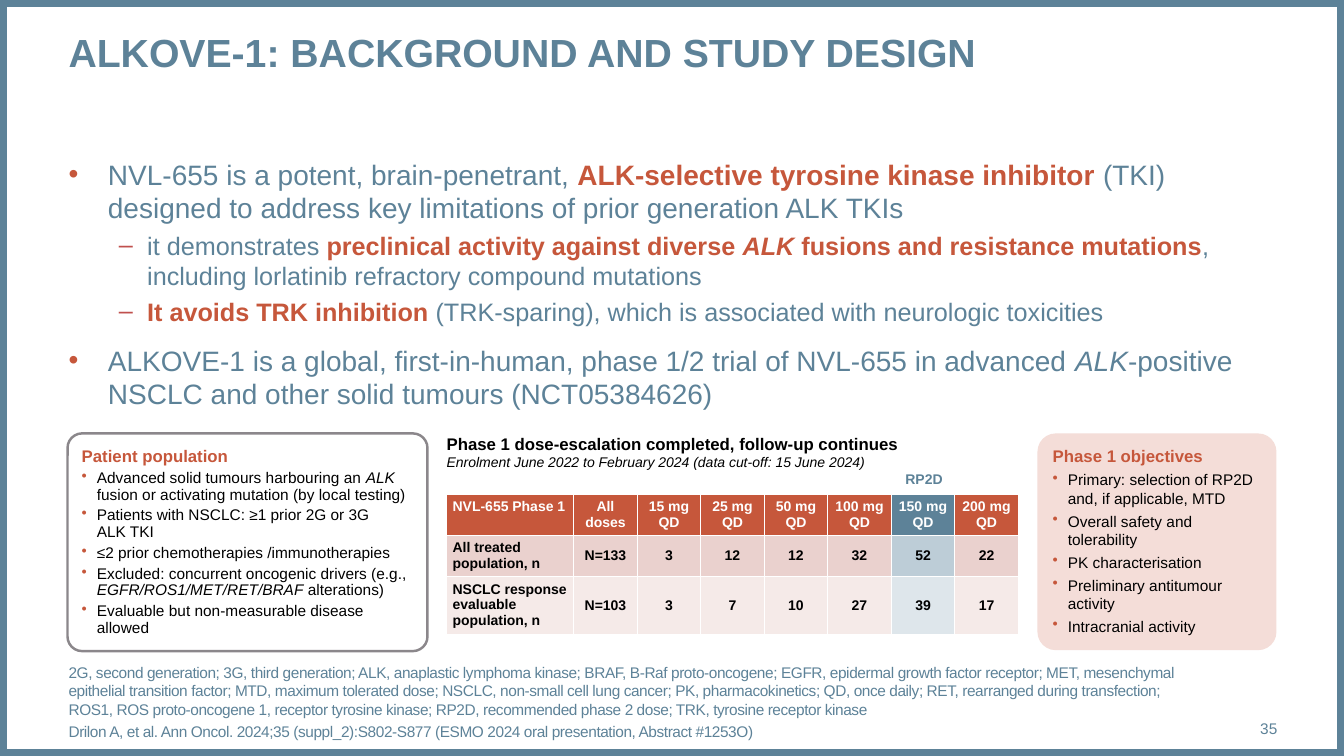
from lxml import etree
from pptx import Presentation
from pptx.dml.color import RGBColor
from pptx.enum import shapes, text
from pptx.oxml import ns
from pptx.util import Pt

PX = 9144  # 100 px to the inch
BLUE = RGBColor(0x5D, 0x82, 0x98)
RUST = RGBColor(0xC6, 0x57, 0x3B)
RED = RGBColor(0xC0, 0x50, 0x4D)
PINK = RGBColor(0xF4, 0xDD, 0xD8)
GREY = RGBColor(0x8B, 0x87, 0x8B)
BLACK = RGBColor(0, 0, 0)
WHITE = RGBColor(255, 255, 255)
ROSE = RGBColor(0xEA, 0xD1, 0xCE)
PALE = RGBColor(0xF5, 0xEA, 0xE8)
SKY = RGBColor(0xBD, 0xCD, 0xD7)
MIST = RGBColor(0xDE, 0xE6, 0xEB)
LEFT, MID = text.PP_ALIGN.LEFT, text.PP_ALIGN.CENTER
TOP, CENTRE = text.MSO_ANCHOR.TOP, text.MSO_ANCHOR.MIDDLE


def write(para, line, size, color, bold=False, align=LEFT):
    """Fill a paragraph; *...* is bold rust text and ~...~ is italic."""
    para.alignment = align
    for i, part in enumerate(line.split("*")):
        for j, bit in enumerate(part.split("~")):
            for k, piece in enumerate(bit.split("\n")):
                if k:
                    para.add_line_break()
                if not piece:
                    continue
                run = para.add_run()
                run.text = piece
                font = run.font
                font.name, font.size = "Arial", Pt(size)
                font.bold = bold or i % 2 == 1
                font.italic = j % 2 == 1
                font.color.rgb = RUST if i % 2 else color


def bullet(para, mark, color, left, hang):
    """Give a paragraph a hanging mark, or none when mark is empty."""
    props = para._p.get_or_add_pPr()
    props.set("marL", str(left * PX))
    props.set("indent", str(-hang * PX))
    if not mark:
        etree.SubElement(props, ns.qn("a:buNone"))
        return
    tint = etree.SubElement(props, ns.qn("a:buClr"))
    etree.SubElement(tint, ns.qn("a:srgbClr")).set("val", str(color))
    etree.SubElement(props, ns.qn("a:buChar")).set("char", mark)


deck = Presentation()
deck.slide_width, deck.slide_height = 1333 * PX, 750 * PX
slide = deck.slides.add_slide(deck.slide_layouts[3])

# Frame round the slide
edge = slide.shapes.add_shape(shapes.MSO_SHAPE.RECTANGLE, 0, 0, 1333 * PX, 750 * PX)
edge.shadow.inherit = False
edge.fill.background()
edge.line.color.rgb = BLUE
edge.line.width = Pt(10)

# Title, main list and footnotes, then the free text boxes
title, body, notes = slide.placeholders
number, head, dose = [slide.shapes.add_textbox(0, 0, 0, 0) for _ in range(3)]
for box, x, y, w, h, anchor, wrap in [
    (title, 68, 28, 1199, 94, TOP, True),
    (body, 68, 156, 1199, 495, TOP, True),
    (notes, 68, 695, 1126, 40, text.MSO_ANCHOR.BOTTOM, True),
    (number, 1181, 703, 86, 40, CENTRE, True),
    (head, 443, 430, 453, 37, TOP, False),
    (dose, 898, 467, 37, 17, TOP, False),
]:
    box.left, box.top, box.width, box.height = x * PX, y * PX, w * PX, h * PX
    frame = box.text_frame
    frame.margin_left = frame.margin_right = frame.margin_top = frame.margin_bottom = 0
    frame.vertical_anchor = anchor
    frame.word_wrap = wrap
    frame.auto_size = text.MSO_AUTO_SIZE.NONE

write(title.text_frame.paragraphs[0], "ALKOVE-1: BACKGROUND AND STUDY DESIGN", 28, BLUE, True)
write(number.text_frame.paragraphs[0], "35", 11, BLUE, align=text.PP_ALIGN.RIGHT)
write(dose.text_frame.paragraphs[0], "RP2D", 10, BLUE, True, MID)
write(head.text_frame.paragraphs[0], "Phase 1 dose-escalation completed, follow-up continues", 12, BLACK, True)
write(head.text_frame.add_paragraph(),
      "~Enrolment June 2022 to February 2024 (data cut-off: 15 June 2024)~", 10, BLACK)

points = [
    (0, "NVL-655 is a potent, brain-penetrant, *ALK-selective tyrosine kinase inhibitor *(TKI) "
        "designed to address key limitations of prior generation ALK TKIs"),
    (1, "it demonstrates *preclinical activity against diverse ~ALK~ fusions and resistance "
        "mutations*, including lorlatinib refractory compound mutations"),
    (1, "*It avoids TRK inhibition* (TRK-sparing), which is associated with neurologic toxicities"),
    (0, "ALKOVE-1 is a global, first-in-human, phase 1/2 trial of NVL-655 in advanced "
        "~ALK~-positive NSCLC and other solid tumours (NCT05384626)"),
]
for i, (level, line) in enumerate(points):
    para = body.text_frame.add_paragraph() if i else body.text_frame.paragraphs[0]
    para.level = level
    if level:
        bullet(para, "–", RED, 78, 28)
    else:
        bullet(para, "•", RUST, 39, 39)
    para.space_before = Pt((4 if level else 12) if i else 0)
    write(para, line, 18 if level else 20, BLUE)

sources = [
    "2G, second generation; 3G, third generation; ALK, anaplastic lymphoma kinase; BRAF, B-Raf "
    "proto-oncogene; EGFR, epidermal growth factor receptor; MET, mesenchymal epithelial "
    "transition factor; MTD, maximum tolerated dose; NSCLC, non-small cell lung cancer; "
    "PK, pharmacokinetics; QD, once daily; RET, rearranged during transfection; "
    "ROS1, ROS proto-oncogene 1, receptor tyrosine kinase; RP2D, recommended phase 2 dose; "
    "TRK, tyrosine receptor kinase",
    "Drilon A, et al. Ann Oncol. 2024;35 (suppl_2):S802-S877 (ESMO 2024 oral presentation, "
    "Abstract #1253O)",
]
for i, line in enumerate(sources):
    para = notes.text_frame.add_paragraph() if i else notes.text_frame.paragraphs[0]
    bullet(para, "", None, 0, 0)
    para.space_before = Pt(3 if i else 0)
    write(para, line, 11, BLUE)
    for run in para.runs:
        run._r.get_or_add_rPr().set("spc", "-30")

# Dose table
rows = [
    ["NVL-655 Phase 1", "All\ndoses"] + [f"{mg} mg\nQD" for mg in (15, 25, 50, 100, 150, 200)],
    ["All treated population, n", "N=133", "3", "12", "12", "32", "52", "22"],
    ["NSCLC response evaluable population, n", "N=103", "3", "7", "10", "27", "39", "17"],
]
tints = [(RUST, BLUE), (ROSE, SKY), (PALE, MIST)]
PICK = 6  # the recommended dose
grid = slide.shapes.add_table(3, 8, 443 * PX, 490 * PX, 567 * PX, 139 * PX).table
for c, col in enumerate(grid.columns):
    col.width = (63 if c else 126) * PX
for r, (row, high) in enumerate(zip(rows, (41, 41, 57))):
    grid.rows[r].height = high * PX
    for c, label in enumerate(row):
        cell = grid.cell(r, c)
        cell.fill.solid()
        cell.fill.fore_color.rgb = tints[r][c == PICK]
        cell.margin_left = cell.margin_right = 6 * PX
        cell.margin_top = cell.margin_bottom = 5 * PX
        cell.vertical_anchor = CENTRE if c else TOP
        write(cell.text_frame.paragraphs[0], label, 10, BLACK if r else WHITE, True,
              MID if c else LEFT)

# Cards on both sides of the table
cards = [
    (1029, 237, 215, 0.084, PINK, None, 1, "Phase 1 objectives", [
        "Primary: selection of RP2D and, if applicable, MTD",
        "Overall safety and tolerability",
        "PK characterisation",
        "Preliminary antitumour activity",
        "Intracranial activity",
    ]),
    (67, 357, 216, 0.067, WHITE, GREY, 0.9, "Patient population", [
        "Advanced solid tumours harbouring an ~ALK~ fusion or activating mutation (by local testing)",
        "Patients with NSCLC: ≥1 prior 2G or 3G\nALK TKI",
        "≤2 prior chemotherapies /immunotherapies",
        "Excluded: concurrent oncogenic drivers (e.g., ~EGFR/ROS1/MET/RET/BRAF ~alterations)",
        "Evaluable but non-measurable disease allowed",
    ]),
]
for x, w, h, bend, fill, line, gap, name, items in cards:
    card = slide.shapes.add_shape(
        shapes.MSO_SHAPE.ROUNDED_RECTANGLE, x * PX, 430 * PX, w * PX, h * PX)
    card.adjustments[0] = bend
    card.shadow.inherit = False
    card.fill.solid()
    card.fill.fore_color.rgb = fill
    if line:
        card.line.color.rgb = line
        card.line.width = Pt(1.75)
    else:
        card.line.fill.background()
    frame = card.text_frame
    frame.word_wrap = True
    frame.vertical_anchor = CENTRE
    para = frame.paragraphs[0]
    para.line_spacing, para.space_after = 0.9, Pt(3)
    write(para, name, 12, RUST, True)
    for item in items:
        para = frame.add_paragraph()
        bullet(para, "•", RUST, 15, 15)
        para.line_spacing, para.space_after = gap, Pt(3)
        write(para, item, 11, BLACK)

deck.save("out.pptx")
